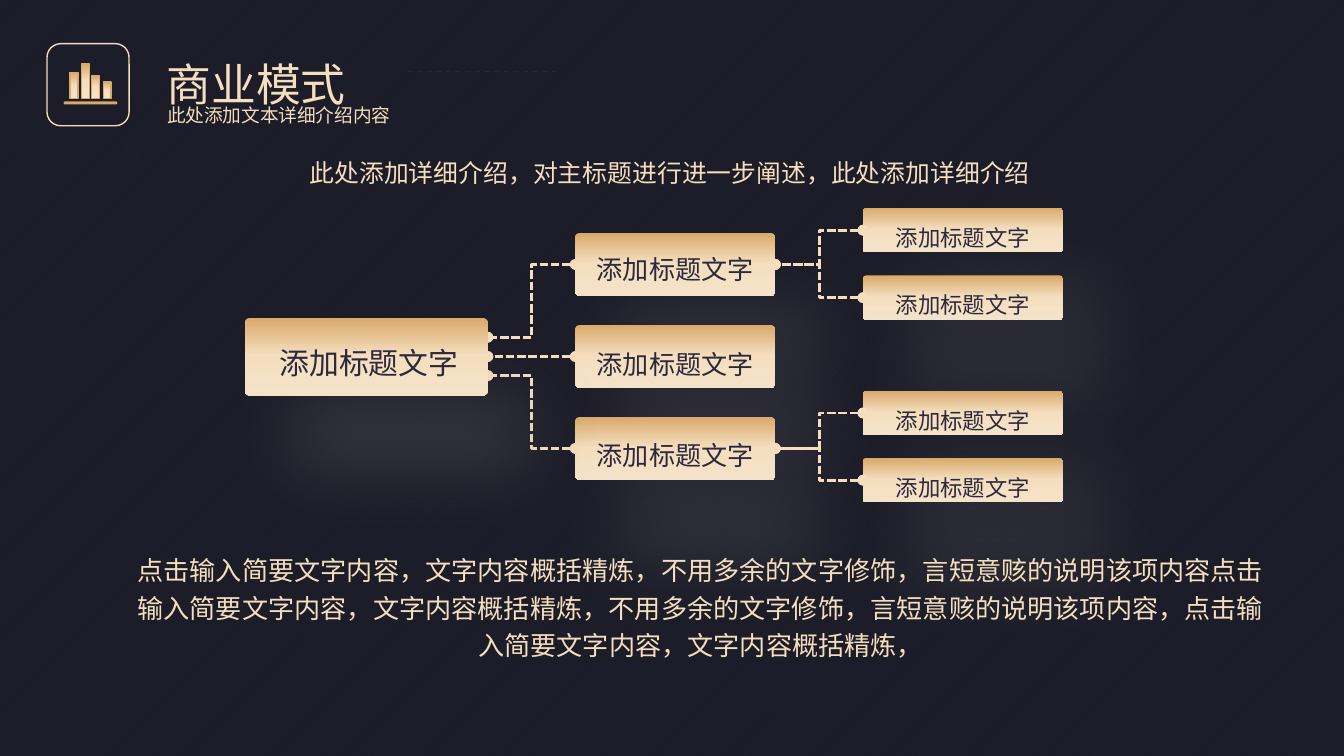
from dataclasses import dataclass

from lxml.etree import SubElement
from pptx import Presentation
from pptx.dml.color import RGBColor
from pptx.enum.dml import MSO_LINE, MSO_PATTERN
from pptx.enum.lang import MSO_LANGUAGE_ID
from pptx.enum.shapes import MSO_CONNECTOR, MSO_SHAPE
from pptx.enum.text import MSO_AUTO_SIZE, PP_ALIGN
from pptx.oxml.ns import qn
from pptx.util import Pt


@dataclass(frozen=True)
class Theme:
    font: str = "Arial"
    cream: str = "F4DEBE"
    gold: str = "D9A96A"
    pale: str = "F5E3C9"
    ink: str = "2C293D"
    night: str = "1B1C27"
    stripe: str = "222332"
    faint: str = "262626"
    shadow: str = "808080"
    title: float = 24
    root: float = 16
    body: float = 14
    lead: float = 13.3
    leaf: float = 12
    subtitle: float = 10


THEME = Theme()


def rgb(code):
    return RGBColor.from_string(code)


def paint_gold(fill, owner, middle):
    """Fill with the vertical gold gradient; owner is the XML that holds the fill."""
    fill.gradient()
    fill.gradient_angle = 270
    stops = owner.find(qn("a:gradFill")).find(qn("a:gsLst"))
    for stop in list(stops):
        stops.remove(stop)
    for place, code in ((0, THEME.gold), (middle, THEME.cream), (100, THEME.pale)):
        stop = SubElement(stops, qn("a:gs"), pos=str(place * 1000))
        SubElement(stop, qn("a:srgbClr"), val=code)


def write(frame, text, *, size, color=None, align=PP_ALIGN.LEFT, wrap=True, grow=True):
    """Put one paragraph in a text frame; without a colour it is gold."""
    frame.word_wrap = wrap
    frame.auto_size = MSO_AUTO_SIZE.SHAPE_TO_FIT_TEXT if grow else MSO_AUTO_SIZE.NONE
    para = frame.paragraphs[0]
    para.alignment = align
    para.line_spacing = 1.2
    span = para.add_run()
    span.text = text
    font = span.font
    font.size = Pt(size)
    font.language_id = MSO_LANGUAGE_ID.SIMPLIFIED_CHINESE
    properties = span._r.get_or_add_rPr()
    if color:
        font.fill.solid()
        font.fill.fore_color.rgb = rgb(color)
    else:
        paint_gold(font.fill, properties, 50)
    font.name = THEME.font
    SubElement(properties, qn("a:ea"), typeface=THEME.font)


class Painter:
    def __init__(self, page, theme):
        self.page = page
        self.theme = theme
        self.canvas = page.shapes

    def background(self):
        fill = self.page.background.fill
        fill.patterned()
        fill.pattern = MSO_PATTERN.LIGHT_UPWARD_DIAGONAL
        fill.fore_color.rgb = rgb(self.theme.stripe)
        fill.back_color.rgb = rgb(self.theme.night)

    def start_group(self):
        self.canvas = self.page.shapes.add_group_shape().shapes

    def end_group(self):
        self.canvas = self.page.shapes

    def shape(self, left, top, width, height, *, corner=0, gold=True, outline=None):
        kind = MSO_SHAPE.ROUNDED_RECTANGLE if corner else MSO_SHAPE.RECTANGLE
        box = self.canvas.add_shape(kind, Pt(left), Pt(top), Pt(width), Pt(height))
        if corner:
            box.adjustments[0] = corner
        if outline:
            box.line.color.rgb = rgb(outline)
            box.line.width = Pt(0.75)
        else:
            box.line.fill.background()
        box.shadow.inherit = False
        if gold:
            properties = box._element.spPr
            paint_gold(box.fill, properties, 48)
            self.cast_shadow(properties.find(qn("a:effectLst")))
        else:
            box.fill.background()

    def cast_shadow(self, effects):
        shadow = SubElement(effects, qn("a:outerShdw"), blurRad=str(Pt(40)),
                            dist=str(Pt(47)), dir=str(60 * 60000), algn="tl", rotWithShape="0")
        color = SubElement(shadow, qn("a:srgbClr"), val=self.theme.shadow)
        SubElement(color, qn("a:alpha"), val="23000")

    def line(self, start, end, *, color, width, dash, dots=False):
        level = start[1] == end[1]
        kind = MSO_CONNECTOR.STRAIGHT if level else MSO_CONNECTOR.ELBOW
        link = self.canvas.add_connector(kind, *(Pt(value) for value in (*start, *end)))
        link.line.color.rgb = rgb(color)
        link.line.width = Pt(width)
        link.line.dash_style = dash
        if dots:
            for tip in ("a:headEnd", "a:tailEnd"):
                SubElement(link.line._get_or_add_ln(), qn(tip), type="oval")
        SubElement(link._element.spPr, qn("a:effectLst"))

    def branch(self, start, end):
        self.line(start, end, color=self.theme.cream, width=1.5,
                  dash=MSO_LINE.SQUARE_DOT, dots=True)

    def text(self, left, top, width, height, words, **style):
        box = self.canvas.add_textbox(Pt(left), Pt(top), Pt(width), Pt(height))
        write(box.text_frame, words, **style)

    def node(self, left, top, width, height, size, drop, label, nudge=0):
        """Gold box with a centred label that starts drop points below its top."""
        self.shape(left, top, width, height, corner=0.073)
        self.text(left + 4 + nudge, top + drop, width - 8, size * 1.85, label, size=size,
                  color=self.theme.ink, align=PP_ALIGN.CENTER, wrap=False)


def main():
    deck = Presentation()
    deck.slide_width, deck.slide_height = Pt(720), Pt(405)
    page = deck.slides.add_slide(deck.slide_layouts[6])
    painter = Painter(page, THEME)
    painter.background()

    # Bar chart icon
    painter.start_group()
    painter.shape(25.2, 23.4, 44, 44, corner=0.167, gold=False, outline=THEME.cream)
    painter.shape(34.5, 54.7, 28, 0.9, corner=0.5, outline=THEME.gold)
    floor = 52.8
    for left, height in ((37.6, 13.8), (43.7, 18.5), (49.1, 12.4), (55.4, 8.8)):
        painter.shape(left, floor - height, 4.2, height, outline=THEME.gold)
    painter.end_group()

    # Heading
    painter.line((218.2, 38.2), (300.2, 38.2), color=THEME.faint, width=0.75,
                 dash=MSO_LINE.DASH)
    painter.text(82.1, 20.9, 169.9, 38.9, "商业模式", size=THEME.title)
    painter.text(82.5, 49.7, 136, 20.2, "此处添加文本详细介绍内容",
                 size=THEME.subtitle, grow=False)

    # Tree geometry
    label = "添加标题文字"
    root_left, root_top, root_width, root_height = 131.2, 170.2, 130.2, 41.8
    middle_left, middle_top, middle_step, middle_height = 308.2, 124.8, 49.3, 33.8
    leaf_left, leaf_height, branch_width = 462.3, 23.8, 107.2
    leaf_pairs = ((0, (111.4, 147.6)), (2, (209.4, 245.4)))
    root_right, middle_right = root_left + root_width, middle_left + branch_width
    middle_tops = [middle_top + row * middle_step for row in range(3)]
    centers = [top + middle_height / 2 for top in middle_tops]

    # Tree
    painter.start_group()
    for row, center in enumerate(centers):
        port = centers[1] + (row - 1) * 10.3
        painter.branch((middle_left, center), (root_right, port))
    for top, drop in zip(middle_tops, (4.2, 5.8, 4.9)):
        painter.node(middle_left, top, branch_width, middle_height, THEME.body, drop, label)
    painter.node(root_left, root_top, root_width, root_height, THEME.root, 7, label, nudge=1.4)
    leaves = [(row, top) for row, tops in leaf_pairs for top in tops]
    for row, top in leaves:
        painter.node(leaf_left, top, branch_width, leaf_height, THEME.leaf, 2.2, label)
    for row, top in leaves:
        painter.branch((leaf_left, top + leaf_height / 2), (middle_right, centers[row]))
    painter.end_group()

    # Closing and leading text
    painter.text(61.9, 290.2, 627.1, 66.2,
                 "点击输入简要文字内容，文字内容概括精炼，不用多余的文字修饰，言短意赅的说明该项内容"
                 "点击输入简要文字内容，文字内容概括精炼，不用多余的文字修饰，言短意赅的说明该项内容，"
                 "点击输入简要文字内容，文字内容概括精炼，",
                 size=THEME.body, align=PP_ALIGN.CENTER)
    painter.text(135.4, 77.8, 447.1, 25.2,
                 "此处添加详细介绍，对主标题进行进一步阐述，此处添加详细介绍",
                 size=THEME.lead, align=PP_ALIGN.CENTER, grow=False)

    deck.save("out.pptx")


if __name__ == "__main__":
    main()
